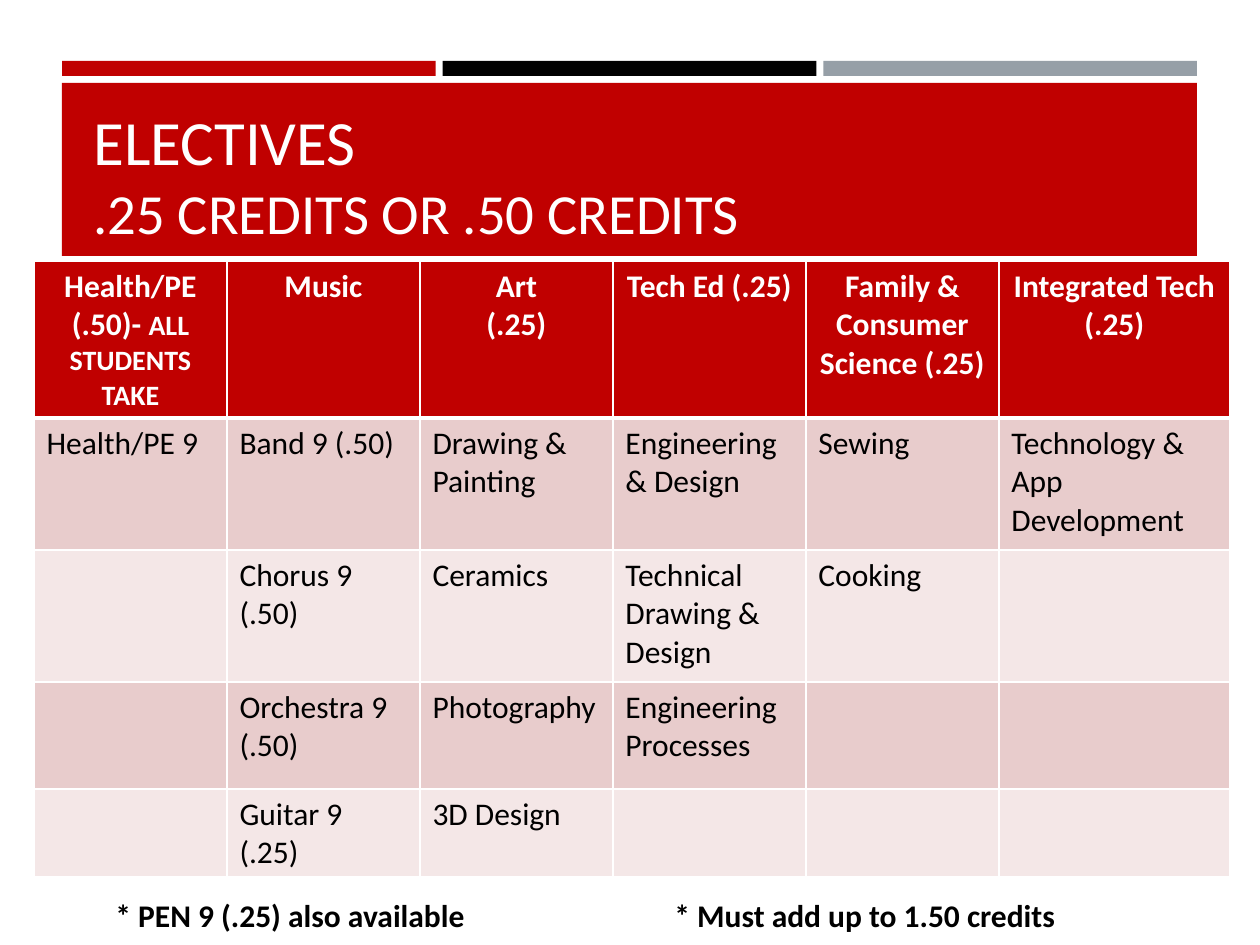
from lxml.etree import SubElement
from pptx import Presentation
from pptx.dml.color import RGBColor
from pptx.enum.shapes import MSO_SHAPE as Shape
from pptx.enum.text import MSO_ANCHOR as Anchor, PP_ALIGN as Align
from pptx.oxml.ns import qn
from pptx.util import Pt

FONT = "Calibri"
COLORS = {"red": "C00000", "black": "000000", "gray": "969FA7",
          "white": "FFFFFF", "rose": "E8CCCC", "blush": "F4E7E7"}

# Content: a cell is a list of paragraphs, a paragraph a list of (text, size)
TITLE = [[("ELECTIVES", 36)], [(".25 CREDITS OR .50 CREDITS", 32.4)]]
HEADERS = [
    [[("Health/PE", 18)], [("(.50)- ", 18), ("ALL STUDENTS TAKE", 16)]],
    [[("Music", 18)]],
    [[("Art", 18)], [("(.25)", 18)]],
    [[("Tech Ed (.25)", 18)]],
    [[("Family & Consumer Science (.25)", 18)]],
    [[("Integrated Tech (.25)", 18)]],
]
COURSES = [
    ["Health/PE 9", "Band 9 (.50)", "Drawing & Painting",
     "Engineering & Design", "Sewing", "Technology & App Development"],
    ["", "Chorus 9 (.50)", "Ceramics", "Technical Drawing & Design", "Cooking", ""],
    ["", "Orchestra 9 (.50)", "Photography", "Engineering Processes", "", ""],
    ["", "Guitar 9 (.25)", "3D Design", "", "", ""],
]
NOTES = [(103, "* PEN 9 (.25) also available"),
         (662, "* Must add up to 1.50 credits")]

# Layout in px, 126 to the inch
BANNER_LEFT, BANNER_WIDTH, STRIPE_GAP = 62, 1135, 7
COLUMN_WIDTHS = [193] * 5 + [231]
ROW_HEIGHTS = [157, 132, 132, 107, 88]


def px(length):
    return round(length * 914400 / 126)


def rgb(name):
    return RGBColor.from_string(COLORS[name])


def write(frame, paragraphs, color, bold=False, align=Align.LEFT):
    for index, spans in enumerate(paragraphs):
        para = frame.paragraphs[0] if index == 0 else frame.add_paragraph()
        para.alignment = align
        for text, size in spans:
            span = para.add_run()
            span.text = text
            span.font.name = FONT
            span.font.size = Pt(size)
            span.font.bold = bold
            span.font.color.rgb = rgb(color)


def add_bar(page, left, top, width, height, color):
    bar = page.shapes.add_shape(Shape.RECTANGLE, px(left), px(top), px(width), px(height))
    bar.shadow.inherit = False
    bar.fill.solid()
    bar.fill.fore_color.rgb = rgb(color)
    bar.line.fill.background()


def add_text(page, left, top, width, height):
    box = page.shapes.add_textbox(px(left), px(top), px(width), px(height))
    box.text_frame.word_wrap = True
    return box.text_frame


def style_cell(cell, color, top, bottom):
    properties = cell._tc.get_or_add_tcPr()
    for side, points in (("L", 1), ("R", 1), ("T", top), ("B", bottom)):
        line = SubElement(properties, qn(f"a:ln{side}"), w=str(Pt(points)))
        fill = SubElement(line, qn("a:solidFill"))
        SubElement(fill, qn("a:srgbClr"), val=COLORS["white"])
    cell.fill.solid()
    cell.fill.fore_color.rgb = rgb(color)


deck = Presentation()
deck.slide_width, deck.slide_height = px(1260), px(945)
page = deck.slides.add_slide(deck.slide_layouts[6])

# Stripes and title banner
stripe_width = (BANNER_WIDTH - 2 * STRIPE_GAP) / 3
for index, color in enumerate(("red", "black", "gray")):
    left = BANNER_LEFT + index * (stripe_width + STRIPE_GAP)
    add_bar(page, left, 61, stripe_width, 15, color)
add_bar(page, BANNER_LEFT, 83, BANNER_WIDTH, 173, "red")

# Title, raised by its bottom margin to sit inside the banner
title = add_text(page, 81, 173, 1101, 148)
title.vertical_anchor = Anchor.BOTTOM
title.margin_bottom = px(75)
write(title, TITLE, "white")

# Electives table
table = page.shapes.add_table(
    len(ROW_HEIGHTS), len(COLUMN_WIDTHS), px(34), px(261),
    px(sum(COLUMN_WIDTHS)), px(sum(ROW_HEIGHTS))).table
for column, width in zip(table.columns, COLUMN_WIDTHS):
    column.width = px(width)
for row, height in zip(table.rows, ROW_HEIGHTS):
    row.height = px(height)

for column, paragraphs in enumerate(HEADERS):
    cell = table.cell(0, column)
    style_cell(cell, "red", 1, 3)
    write(cell.text_frame, paragraphs, "white", True, Align.CENTER)
for row, courses in enumerate(COURSES, 1):
    for column, course in enumerate(courses):
        cell = table.cell(row, column)
        style_cell(cell, "rose" if row % 2 else "blush", 3 if row == 1 else 1, 1)
        if course:
            write(cell.text_frame, [[(course, 18)]], "black")

# Footnotes
for left, note in NOTES:
    write(add_text(page, left, 890, 495, 50), [[(note, 18)]], "black", True)

deck.save("out.pptx")
